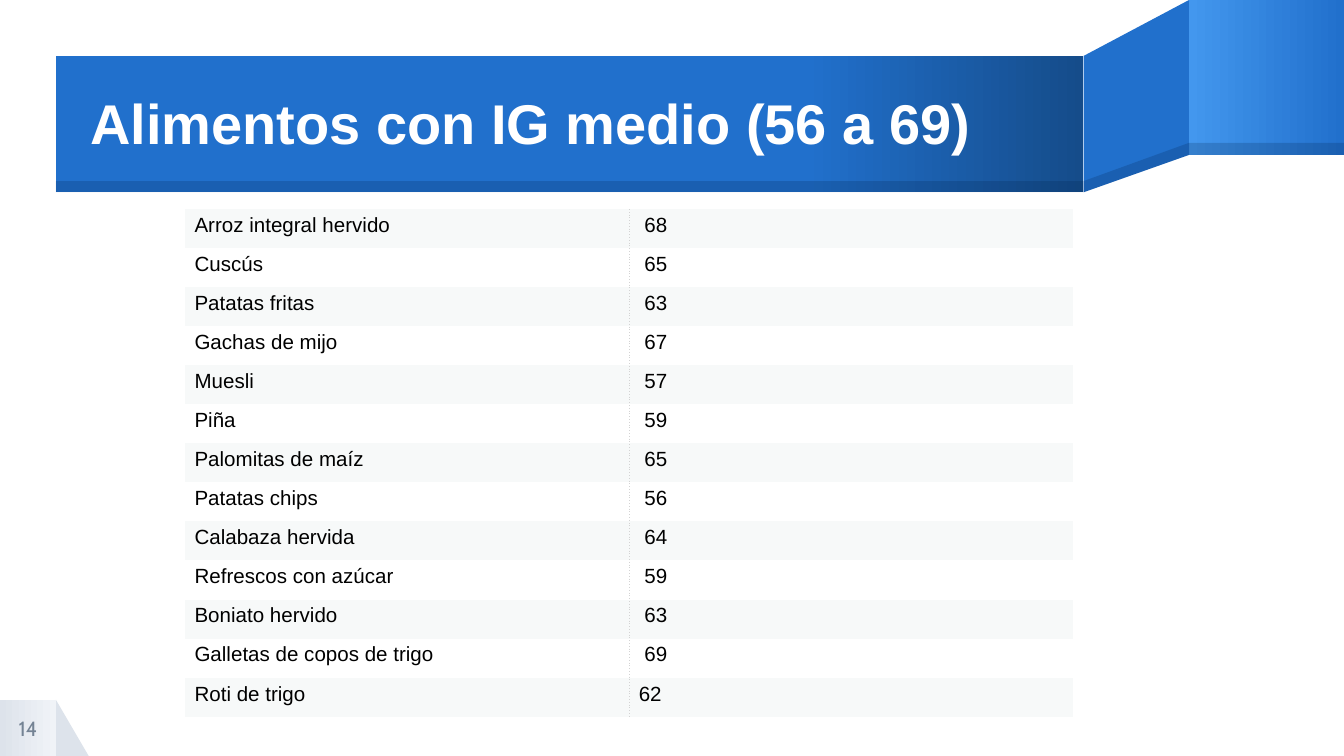
from pptx import Presentation
from pptx import util as u
from pptx.dml import color
from pptx.enum import shapes, text
from pptx.oxml import ns, parse_xml

FOODS = [
    ("Arroz integral hervido", "68"), ("Cuscús", "65"), ("Patatas fritas", "63"),
    ("Gachas de mijo", "67"), ("Muesli", "57"), ("Piña", "59"),
    ("Palomitas de maíz", "65"), ("Patatas chips", "56"), ("Calabaza hervida", "64"),
    ("Refrescos con azúcar", "59"), ("Boniato hervido", "63"),
    ("Galletas de copos de trigo", "69"), ("Roti de trigo", "62"),
]
NO_GRID_STYLE = "{2D5ABB26-0587-4C30-8999-92F81FD0307C}"
BLUE, SHADE = "2170CC", "001F46"
BODY = {"name": "Arial", "size": u.Pt(11), "color": "000000"}
TITLE = {"name": "Arial", "size": u.Pt(30), "color": "FFFFFF", "bold": True}
NUMBER = {"name": "Cabin", "size": u.Pt(11), "color": "748394"}


def rgb(value):
    """Turn a hex string into a colour."""
    return color.RGBColor.from_string(value)


def set_values(target, values):
    """Set the attributes of an object from a dict."""
    for name, value in values.items():
        if name == "color":
            target.color.rgb = rgb(value)
        else:
            setattr(target, name, value)


def paint(shape, fill, opacity=None):
    """Fill a shape with a hex colour or with (position, colour) stops."""
    shape.shadow.inherit = False
    shape.line.fill.background()
    if isinstance(fill, str):
        shape.fill.solid()
        shape.fill.fore_color.rgb = rgb(fill)
    else:
        shape.fill.gradient()
        shape.fill.gradient_angle = 0
        stops = next(shape._element.iter(ns.qn("a:gsLst")))
        stops.clear()
        for position, value in fill:
            stops.append(parse_xml(
                f'<a:gs {ns.nsdecls("a")} pos="{position * 1000}">'
                f'<a:srgbClr val="{value}"/></a:gs>'))
    if opacity:
        tint = next(shape._element.spPr.iter(ns.qn("a:srgbClr")))
        tint.append(parse_xml(f'<a:alpha {ns.nsdecls("a")} val="{opacity * 1000}"/>'))


def add_block(page, frame, fill, opacity=None, kind=shapes.MSO_SHAPE.RECTANGLE):
    """Add a preset shape without outline."""
    paint(page.shapes.add_shape(kind, *map(u.Pt, frame)), fill, opacity)


def add_fold(page, points, fill, opacity=None):
    """Add a closed polygon without outline."""
    start, *rest = [(u.Pt(x), u.Pt(y)) for x, y in points]
    builder = page.shapes.build_freeform(*start)
    builder.add_line_segments(rest)
    paint(builder.convert_to_shape(), fill, opacity)


def add_label(page, frame, words, font, layout):
    """Add a vertically centred text box without margins."""
    box = page.shapes.add_textbox(*map(u.Pt, frame))
    set_values(box.text_frame, {
        "word_wrap": True, "vertical_anchor": text.MSO_ANCHOR.MIDDLE,
        "margin_left": 0, "margin_top": 0, "margin_right": 0, "margin_bottom": 0})
    para = box.text_frame.paragraphs[0]
    set_values(para, layout)
    span = para.add_run()
    span.text = words
    set_values(span.font, font)


def add_ribbon(page):
    """Draw the folded title ribbon with its darker lower edge."""
    add_fold(page, [(637, 0), (580.5, 30), (580.5, 103), (637, 83)], BLUE)
    add_block(page, (637, 0, 83, 83), [(0, "4397EE"), (100, BLUE)])
    add_block(page, (30, 30, 550.5, 73), [(0, BLUE), (73, BLUE), (100, "154C8A")])
    add_fold(page, [(637, 76.5), (580.5, 97), (580.5, 103), (637, 83)], SHADE, 20)
    add_block(page, (637, 76.5, 83, 6.5), SHADE, 20)
    add_block(page, (30, 97, 550.5, 6), SHADE, 20)


def add_corner(page):
    """Draw the page number tab."""
    add_block(page, (30, 375, 17.5, 30), "DDE3EB", kind=shapes.MSO_SHAPE.RIGHT_TRIANGLE)
    add_block(page, (0, 375, 30, 30), [(0, "DDE3EB"), (100, "F0F3F7")])


def fill_cell(cell, words, fill, side, indent):
    """Write one cell and dot its inner border."""
    set_values(cell, {
        "text": words, "margin_left": u.Pt(5.2 + indent), "margin_right": u.Pt(5.2),
        "margin_top": u.Pt(2.6), "margin_bottom": u.Pt(2.6)})
    set_values(cell.text_frame.paragraphs[0].runs[0].font, BODY)
    cell.fill.solid()
    cell.fill.fore_color.rgb = rgb(fill)
    cell._tc.get_or_add_tcPr().insert(0, parse_xml(
        f'<a:{side} {ns.nsdecls("a")} w="{u.Pt(0.5)}"><a:solidFill>'
        f'<a:srgbClr val="D3D3D3"/></a:solidFill><a:prstDash val="dot"/></a:{side}>'))


def add_food_table(page):
    """Add the striped table of foods and their index."""
    row_height = 20.92
    frame = (99, 112, 476, row_height * len(FOODS))
    table = page.shapes.add_table(len(FOODS), 2, *map(u.Pt, frame)).table
    set_values(table, {"first_row": False, "horz_banding": False})
    next(table._tbl.iter(ns.qn("a:tableStyleId"))).text = NO_GRID_STYLE
    for index, (food, value) in enumerate(FOODS):
        table.rows[index].height = u.Pt(row_height)
        fill = "FFFFFF" if index % 2 else "F7F9F9"
        indent = 0 if index == len(FOODS) - 1 else 3
        fill_cell(table.cell(index, 0), food, fill, "lnR", 0)
        fill_cell(table.cell(index, 1), value, fill, "lnL", indent)


def main():
    """Build the slide and save it."""
    deck = Presentation()
    set_values(deck, {"slide_width": u.Pt(720), "slide_height": u.Pt(405)})
    page = deck.slides.add_slide(deck.slide_layouts[6])
    add_corner(page)
    add_ribbon(page)
    add_label(page, (48.5, 31, 532, 73), "Alimentos con IG medio (56 a 69)",
              TITLE, {"line_spacing": 0.9})
    add_label(page, (0, 375, 30, 30), "14", NUMBER,
              {"alignment": text.PP_ALIGN.CENTER})
    add_food_table(page)
    deck.save("out.pptx")


if __name__ == "__main__":
    main()
